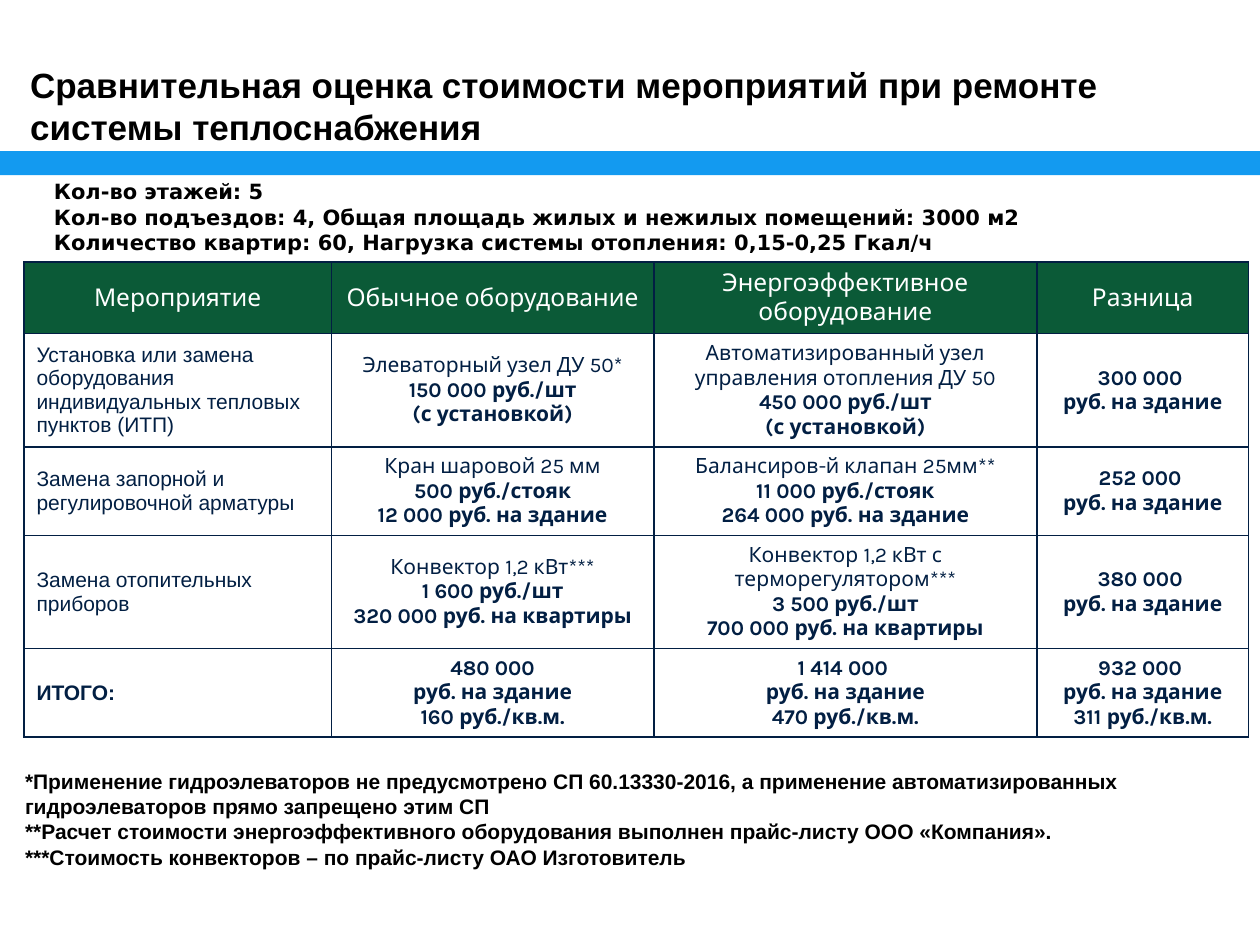
from dataclasses import dataclass

from lxml.etree import SubElement
from pptx import Presentation
from pptx.dml.color import RGBColor as RGB
from pptx.enum.shapes import MSO_SHAPE as Geom
from pptx.enum.text import MSO_ANCHOR as Anchor, PP_ALIGN as Align
from pptx.oxml.ns import qn
from pptx.util import Inches, Pt


@dataclass(frozen=True)
class Theme:
    bar: str = "139AF0"
    head: str = "0B5A37"
    white: str = "FFFFFF"
    navy: str = "021F43"
    black: str = "000000"
    sans: str = "Arial"
    note: str = "DejaVu Sans"
    grid: str = "Karla"
    big: int = 20
    mid: int = 14
    base: int = 12


@dataclass(frozen=True)
class Block:
    box: tuple[float, float, float, float]
    lines: tuple[str, ...]
    font: str
    size: int
    anchor: Anchor = Anchor.TOP


@dataclass(frozen=True)
class Row:
    high: float
    cells: tuple[tuple[str, ...], ...]


T = Theme()
SITE = "руб. на здание"
FITTED = "(с установкой)"

BLOCKS = (
    Block((0.14, 0.42, 9.25, 0.83),
          ("Сравнительная оценка стоимости мероприятий при ремонте системы теплоснабжения",),
          T.sans, T.big, Anchor.MIDDLE),
    Block((0.1, 6.05, 9.81, 0.91),
          ("*Применение гидроэлеваторов не предусмотрено СП 60.13330-2016, "
           "а применение автоматизированных гидроэлеваторов прямо запрещено этим СП",
           "**Расчет стоимости энергоэффективного оборудования выполнен "
           "прайс-листу ООО «Компания».",
           "***Стоимость конвекторов – по прайс-листу ОАО Изготовитель"),
          T.sans, T.base),
    Block((0.33, 1.37, 9.67, 0.71),
          ("Кол-во этажей: 5",
           "Кол-во подъездов: 4, Общая площадь жилых и нежилых помещений: 3000 м2",
           "Количество квартир: 60, Нагрузка системы отопления: 0,15-0,25 Гкал/ч"),
          T.note, T.base),
)

WIDTHS = (2.44, 2.56, 3.04, 1.68)
ROWS = (
    Row(0.55, (("Мероприятие",), ("Обычное оборудование",),
               ("Энергоэффективное оборудование",), ("Разница",))),
    Row(0.88, (("Установка или замена оборудования индивидуальных тепловых пунктов (ИТП)",),
               ("Элеваторный узел ДУ 50*", "150 000 руб./шт", FITTED),
               ("Автоматизированный узел управления отопления ДУ 50",
                "450 000 руб./шт", FITTED),
               ("300 000 ", SITE))),
    Row(0.69, (("Замена запорной и регулировочной арматуры",),
               ("Кран шаровой 25 мм", "500 руб./стояк", "12 000 руб. на здание"),
               ("Балансиров-й клапан 25мм**", "11 000 руб./стояк", "264 000 руб. на здание"),
               ("252 000 ", SITE))),
    Row(0.88, (("Замена отопительных приборов",),
               ("Конвектор 1,2 кВт***", "1 600 руб./шт", "320 000 руб. на квартиры"),
               ("Конвектор 1,2 кВт с терморегулятором***",
                "3 500 руб./шт", "700 000 руб. на квартиры"),
               ("380 000 ", SITE))),
    Row(0.69, (("ИТОГО:",),
               ("480 000", SITE, "160 руб./кв.м."),
               ("1 414 000 ", SITE, "470 руб./кв.м."),
               ("932 000 ", SITE, "311 руб./кв.м."))),
)


def write(frame, lines: tuple[str, ...], bolds: list[bool], font: str,
          size: int, color: str, align: Align = Align.LEFT) -> None:
    for i, (line, bold) in enumerate(zip(lines, bolds)):
        para = frame.paragraphs[0] if i == 0 else frame.add_paragraph()
        para.alignment = align
        run = para.add_run()
        run.text = line
        look = {"name": font, "size": Pt(size), "bold": bold}
        for key, value in look.items():
            setattr(run.font, key, value)
        run.font.color.rgb = RGB.from_string(color)


def add_block(slide, block: Block) -> None:
    frame = slide.shapes.add_textbox(*map(Inches, block.box)).text_frame
    frame.word_wrap = True
    frame.vertical_anchor = block.anchor
    write(frame, block.lines, [True] * len(block.lines), block.font, block.size, T.black)


def add_bar(slide) -> None:
    bar = slide.shapes.add_shape(Geom.RECTANGLE, *map(Inches, (0, 1.2, 10, 0.19)))
    bar.shadow.inherit = False
    bar.fill.solid()
    bar.fill.fore_color.rgb = RGB.from_string(T.bar)
    bar.line.fill.background()


def paint(cell, color: str) -> None:
    # Borders go before the fill in the cell properties
    props = cell._tc.get_or_add_tcPr()
    for side in ("lnL", "lnR", "lnT", "lnB"):
        edge = SubElement(props, qn(f"a:{side}"), w=str(Pt(1)))
        fill = SubElement(edge, qn("a:solidFill"))
        SubElement(fill, qn("a:srgbClr"), val=T.navy)
    cell.fill.solid()
    cell.fill.fore_color.rgb = RGB.from_string(color)


def add_grid(slide) -> None:
    high = sum(row.high for row in ROWS)
    box = map(Inches, (0.19, 2.08, sum(WIDTHS), high))
    table = slide.shapes.add_table(len(ROWS), len(WIDTHS), *box).table
    for col, width in zip(table.columns, WIDTHS):
        col.width = Inches(width)
    for r, row in enumerate(ROWS):
        table.rows[r].height = Inches(row.high)
        head, total = r == 0, r == len(ROWS) - 1
        for c, lines in enumerate(row.cells):
            cell = table.cell(r, c)
            cell.vertical_anchor = Anchor.MIDDLE
            paint(cell, T.head if head else T.white)
            # Sums are bold, item names are not
            bolds = [not head and (total or c == 3 or i > 0) for i in range(len(lines))]
            label = c == 0 and not head
            write(cell.text_frame, lines, bolds,
                  T.sans if label else T.grid,
                  T.mid if head else T.base,
                  T.white if head else T.navy,
                  Align.LEFT if label else Align.CENTER)


def main() -> None:
    deck = Presentation()
    deck.slide_width, deck.slide_height = Inches(10), Inches(7.5)
    slide = deck.slides.add_slide(deck.slide_layouts[6])
    title, *notes = BLOCKS

    # Heading
    add_bar(slide)
    add_block(slide, title)

    # Cost table
    add_grid(slide)

    # Footnotes and building data
    for note in notes:
        add_block(slide, note)
    deck.save("out.pptx")


if __name__ == "__main__":
    main()
